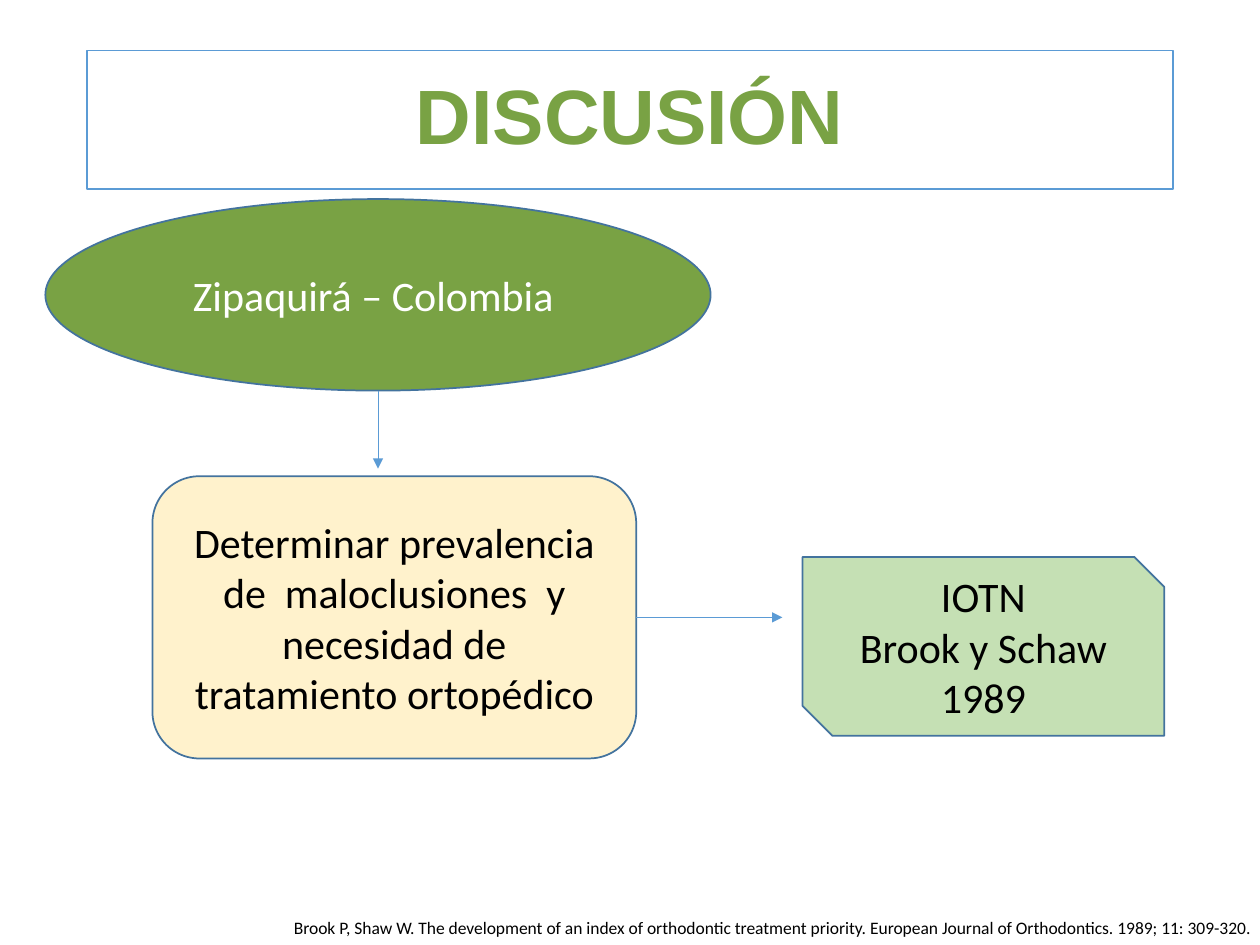
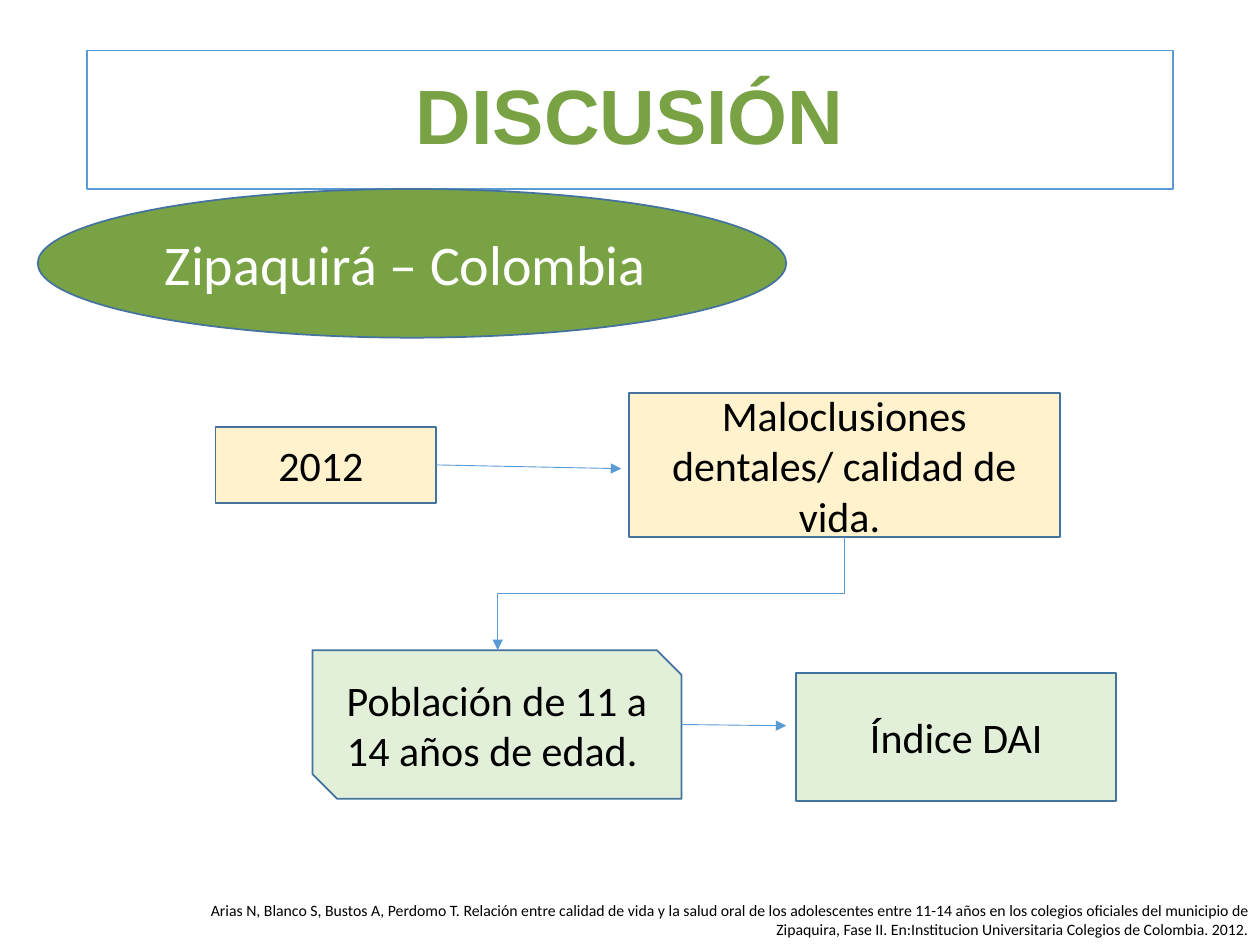
import pptx
import pptx.util
import pptx.dml.color
import pptx.enum.shapes
import pptx.enum.text
import pptx.oxml
import pptx.oxml.ns

SHAPE = pptx.enum.shapes.MSO_SHAPE
LINK = pptx.enum.shapes.MSO_CONNECTOR
ALIGN = pptx.enum.text.PP_ALIGN
ANCHOR = pptx.enum.text.MSO_ANCHOR
FIT = pptx.enum.text.MSO_AUTO_SIZE

GREEN, CREAM, LEAF, MINT = "79A244", "FFF2CC", "C5E0B4", "E2F0D9"
WHITE, BLACK, BORDER, BLUE = "FFFFFF", "000000", "43739E", "5B9BD5"
TITLE = "DISCUSIÓN"
TITLE_BOX = (0.69, 0.4, 8.62, 1.1)
PLACE = "Zipaquirá – Colombia "

SLIDES = [
    {
        "boxes": {
            "place": (SHAPE.OVAL, (0.36, 1.58, 5.28, 1.52), GREEN, WHITE, 24, [PLACE]),
            "aim": (SHAPE.ROUNDED_RECTANGLE, (1.21, 3.78, 3.84, 2.24), CREAM, BLACK, 24,
                    ["Determinar prevalencia de  maloclusiones  y necesidad de tratamiento ortopédico"]),
            "index": (SHAPE.SNIP_2_DIAG_RECTANGLE, (6.37, 4.42, 2.87, 1.42), LEAF, BLACK, 24,
                      ["IOTN", "Brook y Schaw 1989"]),
        },
        "arrows": [("place", "bottom", (3, 3.72)), ("aim", "right", (6.21, 4.9))],
        "source": ((1.23, 7.23, 8.79, 0.27), 10,
                   "Brook P, Shaw W. The development of an index of orthodontic treatment priority. "
                   "European Journal of Orthodontics. 1989; 11: 309-320."),
    },
    {
        "boxes": {
            "year": (SHAPE.RECTANGLE, (1.71, 3.39, 1.75, 0.6), CREAM, BLACK, 24, ["2012 "]),
            "topic": (SHAPE.RECTANGLE, (4.99, 3.12, 3.42, 1.14), CREAM, BLACK, 24,
                      ["Maloclusiones dentales/ calidad de vida. "]),
            "place": (SHAPE.OVAL, (0.3, 1.5, 5.94, 1.18), GREEN, WHITE, 32, [PLACE]),
            "people": (SHAPE.SNIP_2_DIAG_RECTANGLE, (2.48, 5.16, 2.93, 1.18), MINT, BLACK, 24,
                       ["Población de 11 a 14 años de edad. "]),
            "index": (SHAPE.RECTANGLE, (6.32, 5.34, 2.54, 1.02), MINT, BLACK, 24, ["Índice DAI"]),
        },
        "arrows": [("year", "right", (4.93, 3.72)), ("topic", "bottom", (3.95, 5.16)),
                   ("people", "right", (6.24, 5.76))],
        "source": ((1.21, 7.1, 8.79, 0.4), 9,
                   "Arias N, Blanco S, Bustos A, Perdomo T. Relación entre calidad de vida y la salud oral "
                   "de los adolescentes entre 11-14 años en los colegios oficiales del municipio de "
                   "Zipaquira, Fase II. En:Institucion Universitaria Colegios de Colombia. 2012."),
    },
]


def inches(values):
    return [pptx.util.Inches(v) for v in values]


def rgb(hex_string):
    return pptx.dml.color.RGBColor.from_string(hex_string)


def apply(target, values):
    for name, value in values.items():
        setattr(target, name, value)


def set_line(line, color, width):
    line.color.rgb = rgb(color)
    line.width = pptx.util.Pt(width)


def write(sp, texts, size, color, align=ALIGN.CENTER, name="Calibri", bold=False, **frame):
    tf = sp.text_frame
    apply(tf, {"word_wrap": True, **frame})
    for i, text in enumerate(texts):
        p = tf.paragraphs[0] if i == 0 else tf.add_paragraph()
        p.alignment = align
        r = p.add_run()
        r.text = text
        apply(r.font, {"size": pptx.util.Pt(size), "name": name, "bold": bold})
        r.font.color.rgb = rgb(color)
    return tf


def add_title(s):
    sp = s.shapes.title
    apply(sp, dict(zip(("left", "top", "width", "height"), inches(TITLE_BOX))))
    set_line(sp.line, BLUE, 0.75)
    tf = write(sp, [TITLE], 44, GREEN, name="Arial", bold=True,
               vertical_anchor=ANCHOR.MIDDLE, auto_size=FIT.NONE)
    tf.paragraphs[0].line_spacing = 0.9


def add_box(s, kind, at, fill, color, size, texts):
    sp = s.shapes.add_shape(kind, *inches(at))
    sp.shadow.inherit = False
    sp.fill.solid()
    sp.fill.fore_color.rgb = rgb(fill)
    set_line(sp.line, BORDER, 1)
    write(sp, texts, size, color, vertical_anchor=ANCHOR.MIDDLE)


def add_arrow(s, at, side, end):
    x, y, w, h = at
    start = (x + w, y + h / 2) if side == "right" else (x + w / 2, y + h)
    dx, dy = end[0] - start[0], end[1] - start[1]
    if side == "bottom" and abs(dx) > 0.1:
        cx, cy = start[0] + dx / 2, start[1] + dy / 2
        half_w, half_h = dy / 2, abs(dx) / 2
        points = (cx - half_w, cy - half_h, cx + half_w, cy + half_h)
        c = s.shapes.add_connector(LINK.ELBOW, *inches(points))
        c._element.spPr.find(pptx.oxml.ns.qn("a:xfrm")).set("rot", str(90 * 60000))
    else:
        c = s.shapes.add_connector(LINK.STRAIGHT, *inches(start + end))
    set_line(c.line, BLUE, 0.5)
    ns = pptx.oxml.ns.nsdecls("a")
    c.line._get_or_add_ln().append(pptx.oxml.parse_xml(f'<a:tailEnd {ns} type="triangle"/>'))
    c._element.spPr.append(pptx.oxml.parse_xml(f"<a:effectLst {ns}/>"))


def add_source(s, at, size, text):
    sp = s.shapes.add_textbox(*inches(at))
    write(sp, [text], size, BLACK, align=ALIGN.RIGHT, auto_size=FIT.SHAPE_TO_FIT_TEXT)


def main():
    prs = pptx.Presentation()
    prs.slide_width, prs.slide_height = inches((10, 7.5))
    for content in SLIDES:
        s = prs.slides.add_slide(prs.slide_layouts[5])
        add_title(s)
        for box in content["boxes"].values():
            add_box(s, *box)
        add_source(s, *content["source"])
        for name, side, end in content["arrows"]:
            add_arrow(s, content["boxes"][name][1], side, end)
    prs.save("out.pptx")


if __name__ == "__main__":
    main()
